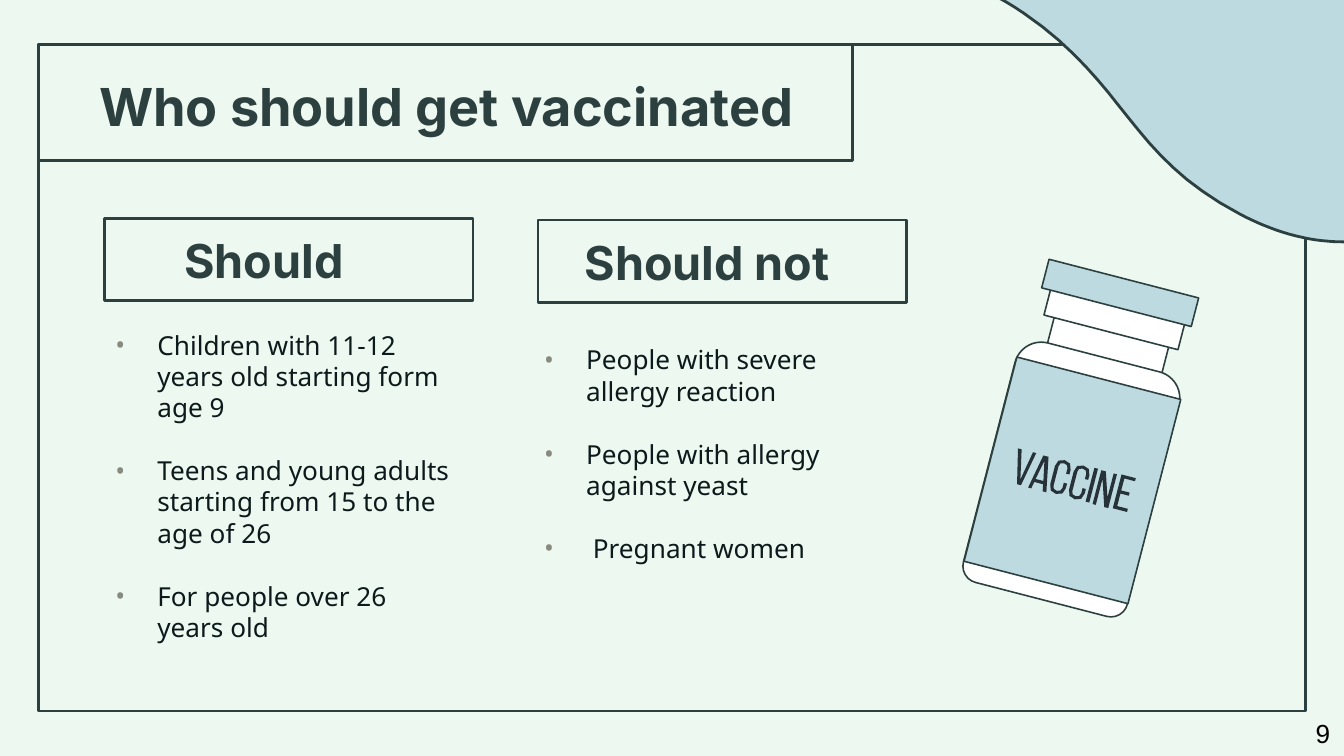
from pptx import Presentation
from pptx.dml.color import RGBColor
from pptx.enum.shapes import MSO_SHAPE
from pptx.enum.text import MSO_ANCHOR, PP_ALIGN
from pptx.util import Inches, Pt
from lxml.etree import SubElement
from pptx.oxml.ns import qn

INK = {name: RGBColor.from_string(code) for name, code in {
    "mint": "EDF8F0", "blue": "BDDAE0", "line": "2D4040", "white": "FFFFFF",
    "body": "0D1A1C", "dark": "263238", "black": "000000"}.items()}
DOT = "878A7D"
TILT = 14.5

deck = Presentation()
deck.slide_width = Inches(10)
deck.slide_height = deck.slide_width * 9 // 16
slide = deck.slides.add_slide(deck.slide_layouts[6])
slide.background.fill.solid()
slide.background.fill.fore_color.rgb = INK["mint"]
shapes = slide.shapes
UNIT = deck.slide_width / 100  # square grid, 100 columns across


def grid(*cells):
    return [round(cell * UNIT) for cell in cells]


def paint(shape, fill=None, line=None, width=1.5):
    shape.shadow.inherit = False
    if fill:
        shape.fill.solid()
        shape.fill.fore_color.rgb = INK[fill]
    else:
        shape.fill.background()
    if line:
        shape.line.color.rgb = INK[line]
        shape.line.width = Pt(width)
    else:
        shape.line.fill.background()


# Frame
frame = shapes.add_shape(MSO_SHAPE.RECTANGLE, *grid(2.87, 3.31, 94.24, 49.6))
paint(frame, line="line")

# Corner wave: each bend has two handles and an end point
bends = [
    [(64.1, -1.4), (65.3, -2.2), (67.5, -2.2)],
    [(69.6, -2.2), (72.5, -1.5), (76.2, 1)],
    [(83.9, 6.3), (83.9, 11.5), (92.2, 15.9)],
    [(95.2, 17.5), (97.8, 18), (100, 18)],
    [(103.6, 18), (105.8, 16.7), (105.8, 16.7)]]
points = [(61.9, -13.3), (64.1, -1.4)]
for one, two, end in bends:
    start = points[-1]
    for step in range(1, 17):
        t = step / 16
        points.append(tuple(
            (1 - t) ** 3 * a + 3 * t * (1 - t) ** 2 * b
            + 3 * t * t * (1 - t) * c + t ** 3 * d
            for a, b, c, d in zip(start, one, two, end)))
pen = shapes.build_freeform(9860, -2010, scale=UNIT / 100)
pen.add_line_segments([(x * 100, y * 100) for x, y in points])
paint(pen.convert_to_shape(), "blue", "line")

# Bullet lists: text and its indent in grid columns
lists = [
    ((39.5, 24, 27.4, 19.5), [
        ("People with severe allergy reaction", 3.13),
        ("People with allergy against yeast", 3.13),
        ("Pregnant women", 3.63)]),
    ((7.6, 23, 27.4, 26.3), [
        ("Children with 11-12 years old starting form age 9", 3.13),
        ("Teens and young adults starting from 15 to the age of 26", 3.13),
        ("For people over 26 years old", 3.13)])]
for place, items in lists:
    frame = shapes.add_textbox(*grid(*place)).text_frame
    frame.word_wrap = True
    frame.vertical_anchor = MSO_ANCHOR.MIDDLE
    frame.margin_left = frame.margin_right = Inches(0.1)
    frame.margin_top = frame.margin_bottom = Inches(0.1)
    for row, (words, indent) in enumerate(items):
        para = frame.add_paragraph() if row else frame.paragraphs[0]
        para.text = words
        para.line_spacing = Pt(16.8)
        if row:
            para.space_before = Pt(16.8)
        props = para._p.get_or_add_pPr()
        props.set("marL", str(grid(indent)[0]))
        props.set("indent", str(grid(-indent)[0]))
        tint = SubElement(SubElement(props, qn("a:buClr")), qn("a:srgbClr"))
        tint.set("val", DOT)
        SubElement(props, qn("a:buFont")).set("typeface", "Noto Sans")
        SubElement(props, qn("a:buChar")).set("char", "•")
        font = para.runs[0].font
        font.name, font.size = "Noto Sans", Pt(14)
        font.color.rgb = INK["body"]

# Vial: neck, body, collar, cap, label
parts = [
    (MSO_SHAPE.RECTANGLE, (78.5, 20.9, 8.8, 6.1), "white"),
    (MSO_SHAPE.ROUND_2_SAME_RECTANGLE, (73.5, 26.3, 12.6, 18.6), "white"),
    (MSO_SHAPE.RECTANGLE, (78, 20.9, 10.3, 3.9), "white"),
    (MSO_SHAPE.RECTANGLE, (77.6, 20.7, 11.5, 2.2), "blue"),
    (MSO_SHAPE.RECTANGLE, (73.5, 27.9, 12.6, 15.7), "blue")]
for kind, place, fill in parts:
    part = shapes.add_shape(kind, *grid(*place))
    if kind == MSO_SHAPE.ROUND_2_SAME_RECTANGLE:
        part.adjustments[0], part.adjustments[1] = 0.16, 0.1
    part.rotation = TILT
    paint(part, fill, "line", 0.85)

# Vial lettering: loops in hundredths of a grid unit
glyphs = {
    "V": [[(0, 0), (60, 260), (90, 260), (140, 0), (115, 0), (75, 220),
           (28, 0)]],
    "A": [[(50, 0), (0, 260), (24, 260), (34, 208), (102, 208), (112, 260),
           (140, 260), (90, 0)],
          [(68, 38), (98, 184), (38, 184)]],
    "C": [[(120, 95), (120, 60), (105, 15), (60, 0), (15, 15), (0, 60),
           (0, 200), (15, 245), (60, 260), (105, 245), (120, 200),
           (120, 165), (95, 165), (95, 205), (85, 228), (60, 236),
           (35, 228), (27, 205), (27, 55), (35, 32), (60, 24), (85, 32),
           (95, 55), (95, 95)]],
    "I": [[(0, 0), (0, 260), (28, 260), (28, 0)]],
    "N": [[(0, 0), (0, 260), (25, 260), (25, 60), (90, 260), (120, 260),
           (120, 0), (95, 0), (95, 185), (35, 0)]],
    "E": [[(0, 0), (0, 260), (110, 260), (110, 236), (28, 236), (28, 140),
           (93, 140), (93, 116), (28, 116), (28, 24), (110, 24), (110, 0)]]}
spots = [(75.4, 33.5), (76.8, 33.9), (78.3, 34.2), (79.7, 34.6),
         (81.1, 34.8), (81.6, 35.1), (83.1, 35.4)]
for name, spot in zip("VACCINE", spots):
    first, *holes = glyphs[name]
    pen = shapes.build_freeform(*first[0], scale=UNIT / 100)
    pen.add_line_segments(first[1:])
    for hole in holes:
        pen.move_to(*hole[0])
        pen.add_line_segments(hole[1:])
    glyph = pen.convert_to_shape(*grid(*spot))
    glyph.rotation = TILT
    paint(glyph, "dark")

# Title and column heads: place, text, size, left inset, anchor
heads = [
    ((2.87, 3.31, 60.55, 8.62), "Who should get vaccinated", 28, 4.5,
     "MIDDLE"),
    ((7.77, 16.24, 27.43, 6.12), "Should", 25, 5.95, "TOP"),
    ((40.03, 16.37, 27.43, 6.12), "Should not", 25, 3.47, "TOP")]
for place, words, size, inset, anchor in heads:
    box = shapes.add_shape(MSO_SHAPE.RECTANGLE, *grid(*place))
    paint(box, line="line")
    frame = box.text_frame
    frame.text = words
    frame.word_wrap = True
    frame.vertical_anchor = MSO_ANCHOR[anchor]
    frame.margin_left, frame.margin_right = grid(inset, 1)
    frame.margin_top, frame.margin_bottom = grid(
        1, 0.5 if anchor == "MIDDLE" else 1)
    para = frame.paragraphs[0]
    para.alignment = PP_ALIGN.LEFT
    font = para.runs[0].font
    font.name, font.size, font.bold = "Inter", Pt(size), True
    font.color.rgb = INK["line"]

# Page number
frame = shapes.add_textbox(*grid(96.9, 52.9, 3.1, 3.4)).text_frame
frame.text = "9"
frame.word_wrap = False
font = frame.paragraphs[0].runs[0].font
font.name, font.size = "Arial", Pt(14)
font.color.rgb = INK["black"]

deck.save("out.pptx")
